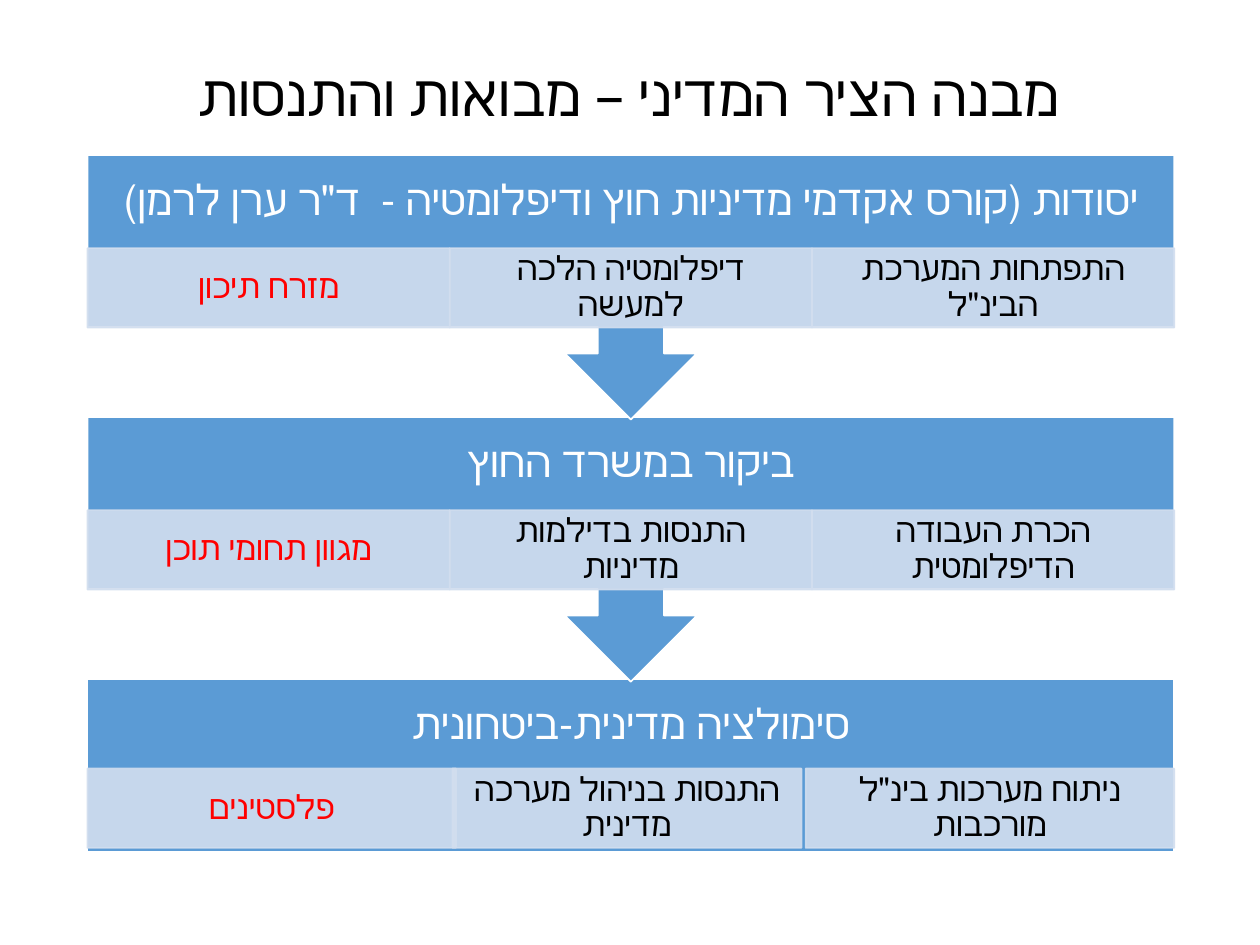
from lxml import etree
from pptx import Presentation
from pptx.dml.color import RGBColor
from pptx.enum.shapes import MSO_SHAPE
from pptx.enum.text import MSO_ANCHOR, PP_ALIGN
from pptx.oxml.ns import qn
from pptx.util import Pt

RECT, CALLOUT = MSO_SHAPE.RECTANGLE, MSO_SHAPE.UP_ARROW_CALLOUT
MIDDLE, CENTER = MSO_ANCHOR.MIDDLE, PP_ALIGN.CENTER
BLUE = RGBColor(0x5B, 0x9B, 0xD5)
PALE = RGBColor(0xD2, 0xDE, 0xEF)
WHITE = RGBColor(0xFF, 0xFF, 0xFF)
BLACK = RGBColor(0, 0, 0)
RED = RGBColor(0xFF, 0, 0)
FONT = "Calibri"

# Content: stages from top to bottom, topics from right to left
TITLE = "מבנה הציר המדיני – מבואות והתנסות"
STAGES = [
    ("יסודות (קורס אקדמי מדיניות חוץ ודיפלומטיה -  ד\"ר ערן לרמן)",
     ["התפתחות המערכת הבינ\"ל", "דיפלומטיה הלכה למעשה", "מזרח תיכון"]),
    ("ביקור במשרד החוץ",
     ["הכרת העבודה הדיפלומטית", "התנסות בדילמות מדיניות", "מגוון תחומי תוכן"]),
    ("סימולציה מדינית-ביטחונית",
     ["ניתוח מערכות בינ\"ל מורכבות", "התנסות בניהול מערכה מדינית", "פלסטינים"]),
]

# Layout in points
LEFT, TOP, WIDTH, PITCH = 50, 88.56, 621, 149.76
CALLOUT_H, LAST_H, HEADING_H, TOPIC_H = 151.2, 98.64, 53.28, 45.36
TOPIC_W = WIDTH / 3
EVEN_COLUMNS = [(LEFT + TOPIC_W * i, TOPIC_W) for i in (2, 1, 0)]
LAST_COLUMNS = [(460.4, 210.6), (258.6, 199.4), (LEFT, 210.6)]
LAST_TOPIC_OFFSET = 51.12


def write(shape, text, size, color, inset_x, inset_y):
    frame = shape.text_frame
    frame.word_wrap = True
    frame.vertical_anchor = MIDDLE
    frame.margin_left = frame.margin_right = Pt(inset_x)
    frame.margin_top = frame.margin_bottom = Pt(inset_y)
    frame.text = text
    paragraph = frame.paragraphs[0]
    paragraph.alignment = CENTER
    paragraph.line_spacing = 0.9
    paragraph._p.get_or_add_pPr().set("rtl", "1")
    font = paragraph.runs[0].font
    font.size = Pt(size)
    font.color.rgb = color
    font.name = FONT


def add_box(kind, x, y, w, h, fill, line):
    box = slide.shapes.add_shape(kind, Pt(x), Pt(y), Pt(w), Pt(h))
    box.shadow.inherit = False
    box.fill.solid()
    box.fill.fore_color.rgb = fill
    box.line.color.rgb = line
    box.line.width = Pt(1)
    return box


def add_topic(text, x, y, w, color):
    topic = add_box(RECT, x, y, w, TOPIC_H, PALE, PALE)
    for tint in topic._element.spPr.iter(qn("a:srgbClr")):
        etree.SubElement(tint, qn("a:alpha")).set("val", "90000")
    write(topic, text, 19, color, 10.8, 2.16)


prs = Presentation()
prs.slide_width, prs.slide_height = Pt(720), Pt(540)
slide = prs.slides.add_slide(prs.slide_layouts[5])

# Title
title = slide.shapes.title
title.left, title.top, title.width, title.height = Pt(48.24), Pt(28.8), Pt(622.8), Pt(54)
write(title, TITLE, 33, BLACK, 7.2, 3.6)

# Stages, the last one first so that each arrow lies over the next stage
last = len(STAGES) - 1
for index in range(last, -1, -1):
    heading, topics = STAGES[index]
    top = TOP + PITCH * index
    if index == last:
        add_box(RECT, LEFT, top, WIDTH, LAST_H, BLUE, WHITE)
        columns, offset = LAST_COLUMNS, LAST_TOPIC_OFFSET
    else:
        add_box(CALLOUT, LEFT, top, WIDTH, CALLOUT_H, BLUE, WHITE).rotation = 180
        columns, offset = EVEN_COLUMNS, HEADING_H
    label = slide.shapes.add_textbox(Pt(LEFT), Pt(top), Pt(WIDTH), Pt(HEADING_H))
    write(label, heading, 24, WHITE, 13.68, 13.68)
    for (x, w), topic, color in zip(columns, topics, (BLACK, BLACK, RED)):
        add_topic(topic, x, top + offset, w, color)

prs.save("out.pptx")
